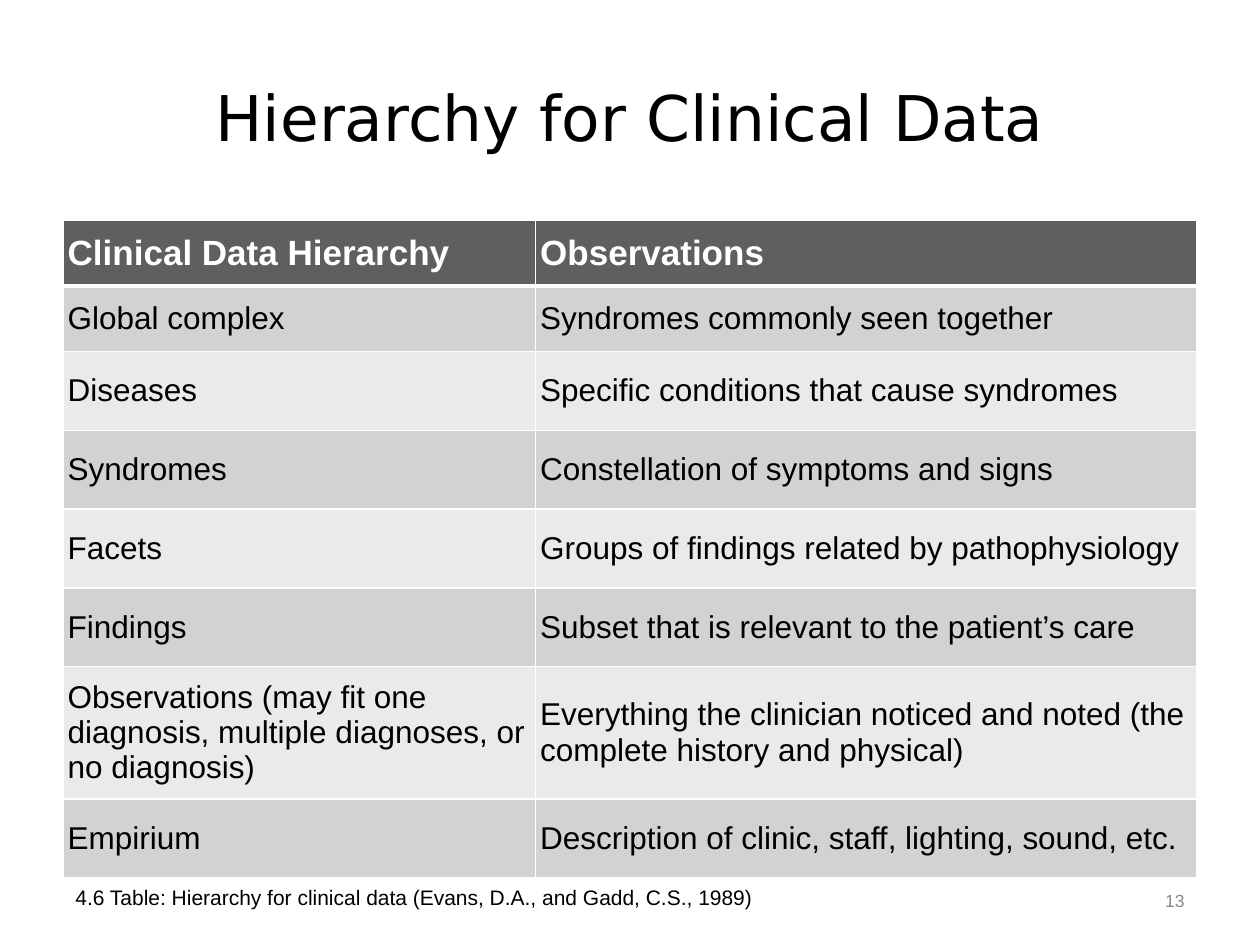
from dataclasses import dataclass

from lxml import etree
from pptx import Presentation
from pptx.dml.color import RGBColor
from pptx.enum import text
from pptx.oxml import ns
from pptx.util import Pt


@dataclass(frozen=True)
class Theme:
    title_font: str = "DejaVu Sans"
    body_font: str = "Arial"
    black: str = "000000"
    white: str = "FFFFFF"
    gray: str = "898989"
    header_fill: str = "5F5F5F"
    band_fills: tuple = ("D2D2D2", "EAEAEA")
    title_size: int = 36
    header_size: int = 20
    body_size: int = 18
    caption_size: int = 12
    number_size: int = 10


THEME = Theme()
LEFT = 36
COLUMN_WIDTHS = (270, 378)
ROW_HEIGHTS = (37.5, 37.5, 45, 45, 45, 45, 75.6, 45)
ROWS = (
    ("Clinical Data Hierarchy", "Observations"),
    ("Global complex", "Syndromes commonly seen together"),
    ("Diseases", "Specific conditions that cause syndromes"),
    ("Syndromes", "Constellation of symptoms and signs"),
    ("Facets", "Groups of findings related by pathophysiology"),
    ("Findings", "Subset that is relevant to the patient’s care"),
    ("Observations (may fit one diagnosis, multiple diagnoses, or no diagnosis)",
     "Everything the clinician noticed and noted (the complete history and physical)"),
    ("Empirium", "Description of clinic, staff, lighting, sound, etc."),
)


def write_text(text_frame, content, size, color, font=THEME.body_font,
               align=text.PP_ALIGN.LEFT, bold=False):
    text_frame.text = content
    text_frame.word_wrap = True
    paragraph = text_frame.paragraphs[0]
    paragraph.alignment = align
    run_font = paragraph.runs[0].font
    run_font.name = font
    run_font.size = Pt(size)
    run_font.bold = bold
    run_font.color.rgb = RGBColor.from_string(color)


def set_borders(cell, bottom_width):
    """Draw white borders; they must precede the fill in the cell properties."""
    properties = cell._tc.get_or_add_tcPr()
    widths = {"a:lnL": 1, "a:lnR": 1, "a:lnT": 1, "a:lnB": bottom_width}
    for index, (tag, width) in enumerate(widths.items()):
        line = etree.Element(ns.qn(tag), w=str(Pt(width)))
        fill = etree.SubElement(line, ns.qn("a:solidFill"))
        etree.SubElement(fill, ns.qn("a:srgbClr"), val=THEME.white)
        properties.insert(index, line)


def add_title(slide, content):
    title = slide.shapes.title
    title.left, title.top = Pt(LEFT), Pt(21.6)
    title.width, title.height = Pt(648), Pt(90)
    title.text_frame.vertical_anchor = text.MSO_ANCHOR.MIDDLE
    write_text(title.text_frame, content, THEME.title_size, THEME.black,
               THEME.title_font, text.PP_ALIGN.CENTER)


def format_cell(cell, content, row_index):
    is_header = row_index == 0
    cell.margin_left = cell.margin_right = Pt(2.7)
    cell.margin_top = cell.margin_bottom = Pt(3.6)
    cell.vertical_anchor = text.MSO_ANCHOR.MIDDLE
    cell.fill.solid()
    fill = THEME.header_fill if is_header else THEME.band_fills[(row_index - 1) % 2]
    cell.fill.fore_color.rgb = RGBColor.from_string(fill)
    write_text(cell.text_frame, content,
               THEME.header_size if is_header else THEME.body_size,
               THEME.white if is_header else THEME.black, bold=is_header)
    set_borders(cell, 3 if is_header else 1)


def add_hierarchy_table(slide):
    table = slide.shapes.add_table(
        len(ROWS), len(COLUMN_WIDTHS), Pt(LEFT), Pt(126),
        Pt(sum(COLUMN_WIDTHS)), Pt(sum(ROW_HEIGHTS))).table
    for column, width in zip(table.columns, COLUMN_WIDTHS):
        column.width = Pt(width)
    for row_index, (row, height, contents) in enumerate(
            zip(table.rows, ROW_HEIGHTS, ROWS)):
        row.height = Pt(height)
        for cell, content in zip(row.cells, contents):
            format_cell(cell, content, row_index)


def add_label(slide, content, box, size, color,
              align=text.PP_ALIGN.LEFT, anchor=text.MSO_ANCHOR.TOP):
    label = slide.shapes.add_textbox(*(Pt(length) for length in box))
    label.text_frame.vertical_anchor = anchor
    write_text(label.text_frame, content, size, color, align=align)


def main():
    presentation = Presentation()
    presentation.slide_width, presentation.slide_height = Pt(720), Pt(540)
    slide = presentation.slides.add_slide(
        presentation.slide_layouts.get_by_name("Title Only"))
    add_title(slide, "Hierarchy for Clinical Data")
    add_hierarchy_table(slide)
    add_label(slide,
              "4.6 Table: Hierarchy for clinical data (Evans, D.A., and Gadd, C.S., 1989)",
              (LEFT, 501.8, 601.2, 34.6), THEME.caption_size, THEME.black)
    add_label(slide, "13", (643.7, 493.2, 40.3, 43.2), THEME.number_size,
              THEME.gray, text.PP_ALIGN.RIGHT, text.MSO_ANCHOR.MIDDLE)
    presentation.save("out.pptx")


if __name__ == "__main__":
    main()
